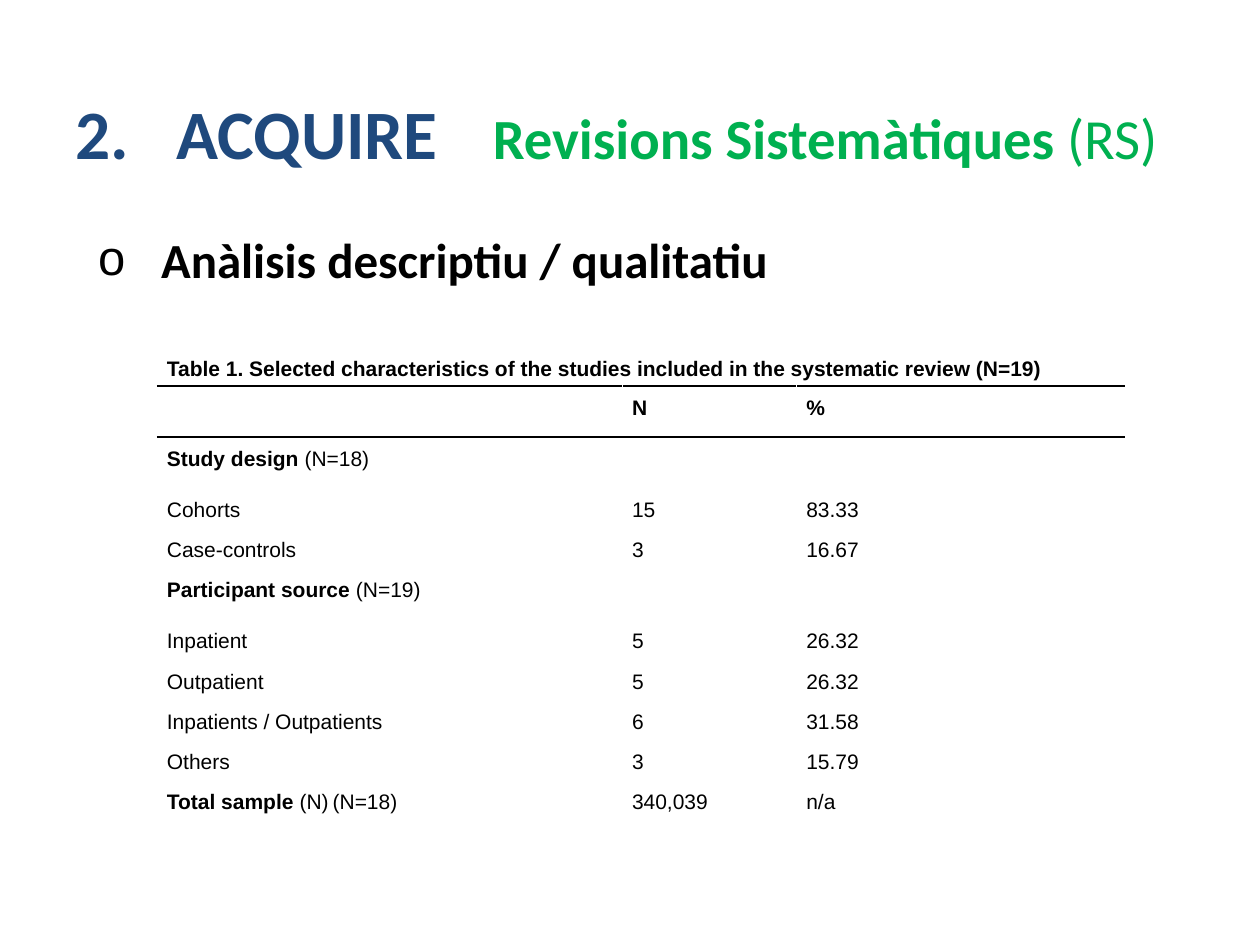
from dataclasses import dataclass

from lxml import etree
from pptx import Presentation
from pptx.dml.color import RGBColor
from pptx.enum.text import MSO_ANCHOR, PP_ALIGN
from pptx.oxml.ns import qn
from pptx.util import Pt

TOP, MIDDLE = MSO_ANCHOR.TOP, MSO_ANCHOR.MIDDLE
LEFT = PP_ALIGN.LEFT


@dataclass(frozen=True)
class Theme:
    head: str = "Calibri"
    body: str = "Arial"
    navy: str = "1F497D"
    green: str = "00B050"
    black: str = "000000"
    white: str = "FFFFFF"
    title: float = 39.6
    topic: float = 32.4
    point: float = 28
    cell: float = 12
    small: float = 8
    lead: float = 15.8
    rule: float = 0.75


def put(item, values):
    for name, value in values.items():
        setattr(item, name, value)


def add(parent, tag, **attrs):
    node = etree.SubElement(parent, qn(tag))
    for name, value in attrs.items():
        node.set(name, str(value))
    return node


class Page:
    def __init__(self, slide, theme):
        self.slide = slide
        self.theme = theme

    def fill(self, para, runs, font):
        """Add runs of (text, changes); changes override the base format."""
        para.alignment = LEFT
        for text, change in runs:
            run = para.add_run()
            run.text = text
            form = {**font, **change}
            run.font.color.rgb = RGBColor.from_string(form.pop("color"))
            put(run.font, form)

    def text(self, box, runs, font, anchor=TOP):
        frame = self.slide.shapes.add_textbox(*map(Pt, box)).text_frame
        put(frame, {"word_wrap": True, "vertical_anchor": anchor})
        para = frame.paragraphs[0]
        self.fill(para, runs, font)
        return para

    def tabs(self, para, stops):
        group = add(para._p.get_or_add_pPr(), "a:tabLst")
        for stop in stops:
            add(group, "a:tab", pos=Pt(stop), algn="l")

    def bullet(self, para, mark, indent):
        props = para._p.get_or_add_pPr()
        props.set("marL", str(Pt(indent)))
        props.set("indent", str(-Pt(indent)))
        add(props, "a:buFont", typeface=self.theme.body)
        add(props, "a:buChar", char=mark)

    def border(self, cell, dark):
        props = cell._tc.get_or_add_tcPr()
        for spot, side in enumerate(("L", "R", "T", "B")):
            line = etree.Element(qn(f"a:ln{side}"), w=str(Pt(self.theme.rule)))
            fill = add(line, "a:solidFill")
            color = self.theme.black if side in dark else self.theme.white
            add(fill, "a:srgbClr", val=color)
            props.insert(spot, line)

    def table(self, spot, cols, rows, data, font, rules):
        shape = self.slide.shapes.add_table(
            len(rows), len(cols), *map(Pt, (*spot, sum(cols), sum(rows))))
        table = shape.table
        put(table, {"first_row": False, "horz_banding": False})
        for col, width in zip(table.columns, cols):
            col.width = Pt(width)
        for row, height in zip(table.rows, rows):
            row.height = Pt(height)
        for r, line in enumerate(data):
            pad = Pt(2.7 if r == 0 else 3.6)
            for c in range(len(cols)):
                cell = table.cell(r, c)
                put(cell, {"margin_left": Pt(5.4), "margin_right": Pt(5.4),
                           "margin_top": pad, "margin_bottom": pad,
                           "vertical_anchor": TOP})
                cell.fill.solid()
                cell.fill.fore_color.rgb = RGBColor.from_string(self.theme.white)
                self.border(cell, rules.get(r, ""))
                if c < len(line):
                    para = cell.text_frame.paragraphs[0]
                    para.line_spacing = Pt(self.theme.lead)
                    self.fill(para, line[c], font)
        table.cell(0, 0).merge(table.cell(0, len(cols) - 1))


def main():
    look = Theme()
    deck = Presentation()
    put(deck, {"slide_width": Pt(720), "slide_height": Pt(540)})
    page = Page(deck.slides.add_slide(deck.slide_layouts[6]), look)

    # Title: number, step and topic on tab stops
    topic = {"size": Pt(look.topic), "color": look.green}
    title = page.text(
        (36, 30.2, 661.7, 90),
        [("2.\tACQUIRE\t", {}), ("Revisions Sistemàtiques", topic),
         ("\u00a0(RS)", {**topic, "bold": False})],
        {"name": look.head, "size": Pt(look.title), "bold": True,
         "color": look.navy}, MIDDLE)
    page.tabs(title, (57.6, 238.5))

    # Bulleted heading
    point = page.text(
        (49, 127.4, 519.8, 41),
        [("Anàlisis descriptiu / qualitatiu", {})],
        {"name": look.head, "size": Pt(look.point), "bold": True,
         "color": look.black})
    page.bullet(point, "o", 36)

    # Table of study characteristics
    bold = {"bold": True}

    def plain(*texts):
        return [[(text, {})] for text in texts]

    def group(name, note):
        return [[(name + "\u00a0", bold), (note, {})]]

    caption = ("Table 1. Selected characteristics of the studies "
               "included in the systematic review (N=19)")
    total = [("Total sample\u00a0", bold), ("(N)", {}),
             ("\u00a0", {"size": Pt(look.small)}), ("(N=18)", {})]
    data = [
        [[(caption, bold)]],
        [[], [("N", bold)], [("%", bold)]],
        group("Study design", "(N=18)"),
        plain("Cohorts", "15", "83.33"),
        plain("Case-controls", "3", "16.67"),
        group("Participant source", "(N=19)"),
        plain("Inpatient", "5", "26.32"),
        plain("Outpatient", "5", "26.32"),
        plain("Inpatients / Outpatients", "6", "31.58"),
        plain("Others", "3", "15.79"),
        [total, *plain("340,039", "n/a")],
    ]
    tall = (1, 2, 5)
    rows = [20.6] + [29.1 if r in tall else 23 for r in range(1, len(data))]
    page.table((90, 199.4), (265.8, 99.6, 187.4), rows, data,
               {"name": look.body, "size": Pt(look.cell), "bold": False,
                "color": look.black},
               {0: "B", 1: "TB", 2: "T"})

    deck.save("out.pptx")


if __name__ == "__main__":
    main()
